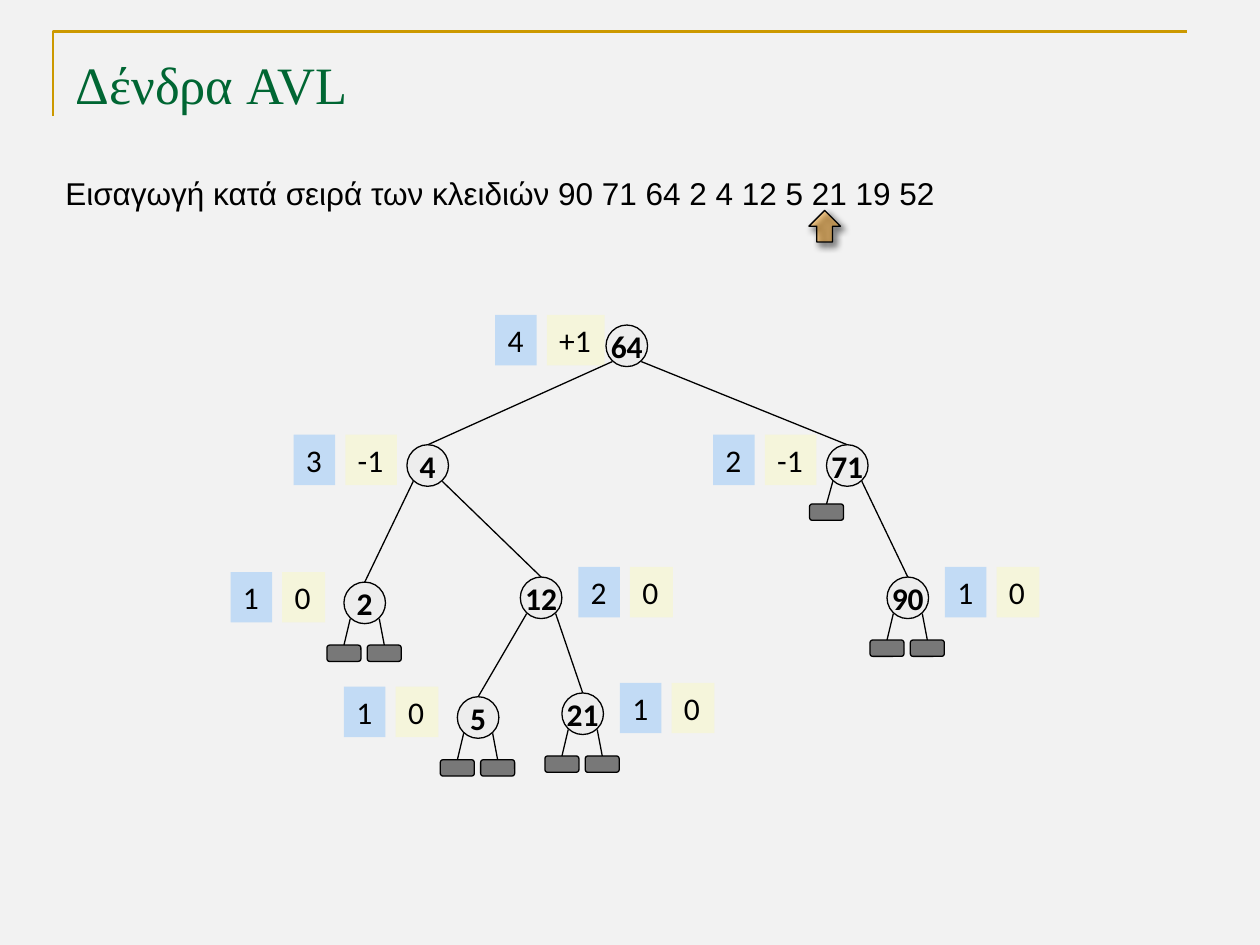
from dataclasses import dataclass

from lxml.etree import SubElement
from pptx import Presentation
from pptx.dml.color import RGBColor
from pptx.enum.shapes import MSO_CONNECTOR, MSO_SHAPE
from pptx.enum.text import MSO_ANCHOR, MSO_AUTO_SIZE, PP_ALIGN
from pptx.oxml.ns import qn
from pptx.util import Inches, Pt

COLORS = {
    "page": "F2F2F2", "border": "CC9900", "title": "006633", "ink": "000000",
    "node": "EAEAEA", "height": "3399FF", "balance": "FFFF99", "arrow": "FF9900",
}
NODE_SIZE = 0.33
LEAF_WIDTH, LEAF_HEIGHT = 0.27, 0.13


@dataclass
class Node:
    key: str
    x: float
    y: float
    height: str
    balance: str
    tag_side: str
    balance_width: float = 0.34
    parent: str = ""
    child_side: str = ""
    leaves: tuple = ()
    leaf_drop: float = 0.5
    tag_shift: float = 0


NODES = [
    Node("64", 4.81, 2.58, "4", "+1", "left", 0.46, tag_shift=0.02),
    Node("4", 3.23, 3.53, "3", "-1", "left", 0.41, "64", "left"),
    Node("71", 6.56, 3.53, "2", "-1", "left", 0.41, "64", "right", ("left",), 0.47),
    Node("2", 2.73, 4.62, "1", "0", "left", 0.34, "4", "left", ("left", "right")),
    Node("12", 4.13, 4.58, "2", "0", "right", 0.34, "4", "right"),
    Node("90", 7.04, 4.58, "1", "0", "right", 0.34, "71", "right", ("left", "right")),
    Node("5", 3.63, 5.53, "1", "0", "left", 0.34, "12", "left", ("left", "right")),
    Node("21", 4.46, 5.5, "1", "0", "right", 0.34, "12", "right", ("left", "right")),
]


def color(name):
    return RGBColor.from_string(COLORS[name])


def write(shape, text, frame_format, font_format, font_color="ink", align=PP_ALIGN.LEFT):
    frame = shape.text_frame
    for name, value in frame_format.items():
        setattr(frame, name, value)
    para = frame.paragraphs[0]
    para.alignment = align
    span = para.add_run()
    span.text = text
    for name, value in font_format.items():
        setattr(span.font, name, value)
    span.font.color.rgb = color(font_color)


def add_filled(page, kind, box, fill, opacity, outlined=True):
    shape = page.shapes.add_shape(kind, *map(Inches, box))
    shape.shadow.inherit = False
    shape.fill.solid()
    shape.fill.fore_color.rgb = color(fill)
    hue = shape.fill._xPr.find(qn("a:solidFill"))[0]
    SubElement(hue, qn("a:alpha"), val=str(opacity * 1000))
    if outlined:
        shape.line.color.rgb = color("ink")
        shape.line.width = Pt(0.75)
    else:
        shape.line.fill.background()
    return shape


def add_edge(page, start, end):
    edge = page.shapes.add_connector(MSO_CONNECTOR.STRAIGHT, *map(Inches, start + end))
    edge.line.color.rgb = color("ink")
    edge.line.width = Pt(0.75)
    SubElement(edge._element.spPr, qn("a:effectLst"))


def add_header(page, box):
    left, top, width, height = map(Inches, box)
    # Corner border
    builder = page.shapes.build_freeform(left, top + height)
    builder.add_line_segments([(left, top), (left + width, top)], close=False)
    border = builder.convert_to_shape()
    border.shadow.inherit = False
    border.fill.background()
    border.line.color.rgb = color("border")
    border.line.width = Pt(1.5)
    # Title
    title = page.shapes.title
    place = {"left": left + Inches(0.08), "top": top + Inches(0.05),
             "width": width, "height": Inches(0.53)}
    for name, value in place.items():
        setattr(title, name, value)
    frame_format = {"auto_size": MSO_AUTO_SIZE.NONE, "vertical_anchor": MSO_ANCHOR.TOP,
                    "margin_top": Inches(0.11), "margin_bottom": 0}
    write(title, "Δένδρα AVL", frame_format,
          {"name": "Times New Roman", "size": Pt(30)}, "title")


def add_key_list(page, box):
    left, top = box[:2]
    keys = page.shapes.add_textbox(*map(Inches, box))
    write(keys, "Εισαγωγή κατά σειρά των κλειδιών 90 71 64 2 4 12 5 21 19 52",
          {"word_wrap": False}, {"name": "Arial", "size": Pt(18)})
    # Arrow under the key being inserted
    arrow = add_filled(page, MSO_SHAPE.DOWN_ARROW, (left + 6, top + 0.34, 0.25, 0.25),
                       "arrow", 40)
    arrow.rotation = 180
    effects = arrow._element.spPr.find(qn("a:effectLst"))
    shadow = SubElement(effects, qn("a:outerShdw"), blurRad=str(Pt(4)), dist=str(Pt(3)),
                        dir=str(45 * 60000), algn="tl", rotWithShape="0")
    hue = SubElement(shadow, qn("a:srgbClr"), val=COLORS["ink"])
    SubElement(hue, qn("a:alpha"), val="40000")


def add_tags(page, node):
    offset = -0.9 + node.tag_shift if node.tag_side == "left" else 0.46
    left, top = node.x + offset, node.y - 0.08
    tags = [(left, 0.33, "height", node.height),
            (left + 0.41, node.balance_width, "balance", node.balance)]
    for tag_left, width, fill, text in tags:
        tag = add_filled(page, MSO_SHAPE.RECTANGLE, (tag_left, top, width, 0.4),
                         fill, 25, outlined=False)
        write(tag, text, {"word_wrap": False, "vertical_anchor": MSO_ANCHOR.TOP},
              {"name": "Calibri", "size": Pt(18)})


def add_leaf(page, node, side):
    center, joint = (0, 0.05) if side == "left" else (0.32, 0.28)
    center_x, top = node.x + center, node.y + node.leaf_drop
    add_edge(page, (center_x, top), (node.x + joint, node.y + 0.29))
    add_filled(page, MSO_SHAPE.ROUNDED_RECTANGLE,
               (center_x - LEAF_WIDTH / 2, top, LEAF_WIDTH, LEAF_HEIGHT), "ink", 50)


def add_tree(page, nodes):
    by_key = {node.key: node for node in nodes}
    for node in nodes:
        if node.parent:
            parent = by_key[node.parent]
            joint = 0.05 if node.child_side == "left" else 0.28
            add_edge(page, (node.x + NODE_SIZE / 2, node.y),
                     (parent.x + joint, parent.y + 0.29))
        for side in node.leaves:
            add_leaf(page, node, side)
        add_tags(page, node)
        circle = add_filled(page, MSO_SHAPE.OVAL, (node.x, node.y, NODE_SIZE, NODE_SIZE),
                            "node", 60)
        write(circle, node.key, {"word_wrap": False, "vertical_anchor": MSO_ANCHOR.MIDDLE},
              {"name": "Calibri", "size": Pt(18), "bold": True}, align=PP_ALIGN.CENTER)


def main():
    deck = Presentation()
    deck.slide_width, deck.slide_height = Inches(10), Inches(7.5)
    page = deck.slides.add_slide(deck.slide_layouts[5])
    page.background.fill.solid()
    page.background.fill.fore_color.rgb = color("page")
    add_header(page, (0.42, 0.25, 9, 0.67))
    add_key_list(page, (0.42, 1.33, 7.17, 0.4))
    add_tree(page, NODES)
    deck.save("out.pptx")


if __name__ == "__main__":
    main()
